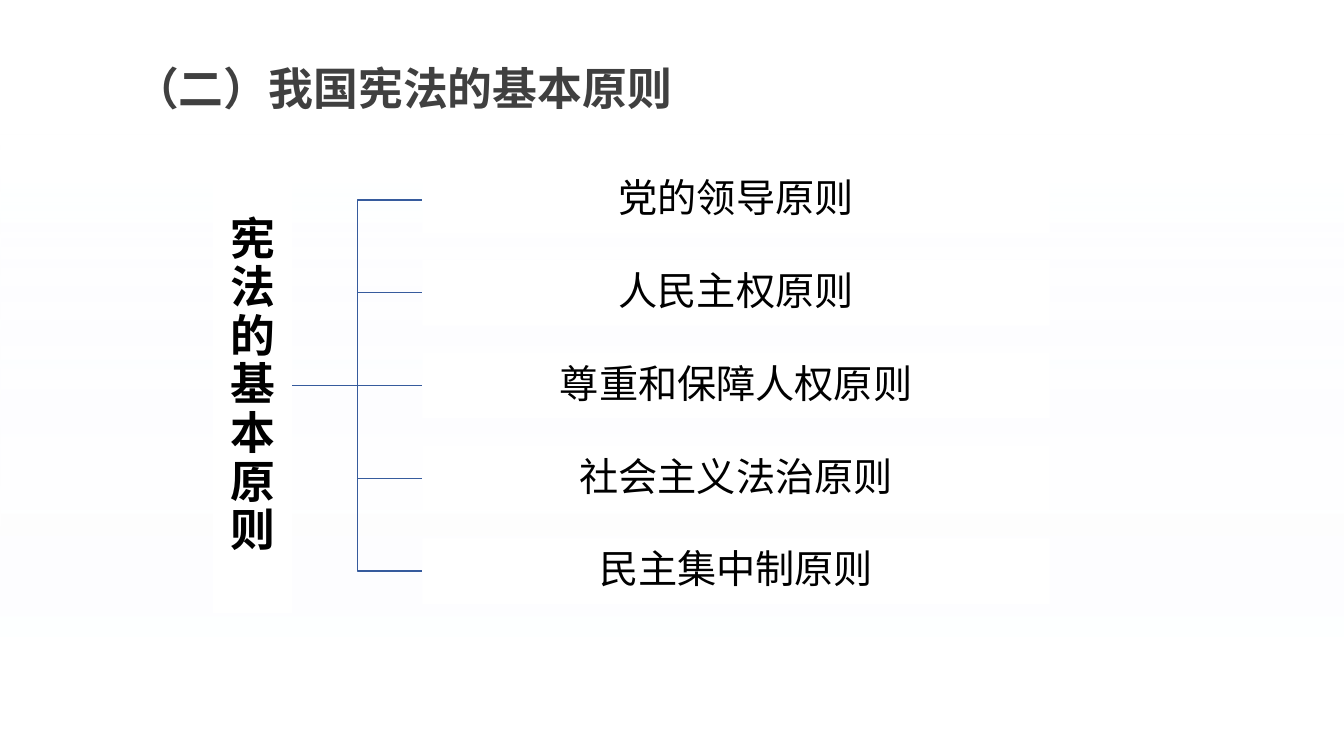
"""Build a slide that branches the basic principles of the constitution."""
from lxml import etree
from pptx import Presentation
from pptx.dml.color import RGBColor
from pptx.enum.shapes import MSO_CONNECTOR, MSO_SHAPE
from pptx.enum.text import MSO_ANCHOR, MSO_AUTO_SIZE, PP_ALIGN
from pptx.oxml.ns import qn
from pptx.util import Inches, Pt

TITLE = "（二）我国宪法的基本原则"
ROOT = "宪法的基本原则"
PRINCIPLES = [
    "党的领导原则",
    "人民主权原则",
    "尊重和保障人权原则",
    "社会主义法治原则",
    "民主集中制原则",
]

WHITE = RGBColor(0xFF, 0xFF, 0xFF)
BLACK = RGBColor(0, 0, 0)
DARK_GRAY = RGBColor(0x40, 0x40, 0x40)
PALE_BLUE = RGBColor(0xF7, 0xFA, 0xFD)
LINE_BLUE = RGBColor(0x36, 0x5B, 0x9D)
FONT = "Noto Sans CJK SC"
TITLE_FONT = "Arial"
RECTANGLE = MSO_SHAPE.RECTANGLE
STRAIGHT, ELBOW = MSO_CONNECTOR.STRAIGHT, MSO_CONNECTOR.ELBOW
MIDDLE = MSO_ANCHOR.MIDDLE
CENTER, LEFT = PP_ALIGN.CENTER, PP_ALIGN.LEFT
NO_FIT = MSO_AUTO_SIZE.NONE
LEFT_SIDE, RIGHT_SIDE = 1, 3

SLIDE_WIDTH, SLIDE_HEIGHT = 13.33, 7.5
GLOW_TOP = 1.33
GLOW_STOPS = [(0, PALE_BLUE, 0), (0.86, WHITE, 70)]
BRANCH_LEFT, BRANCH_TOP = 4.19, 1.66
BRANCH_WIDTH, BRANCH_HEIGHT, BRANCH_PITCH = 6.22, 0.65, 0.92
ROOT_LEFT, ROOT_WIDTH, ROOT_HEIGHT = 2.11, 0.79, 4.51
ROOT_LINE = Pt(34.7)


def write(shape, text, size, color, font_name, bold, align, spacing):
    """Put one formatted paragraph in a shape."""
    frame = shape.text_frame
    frame.text = text
    frame.word_wrap = True
    frame.auto_size = NO_FIT
    frame.vertical_anchor = MIDDLE
    paragraph = frame.paragraphs[0]
    paragraph.alignment = align
    paragraph.line_spacing = spacing
    font = paragraph.runs[0].font
    font.size, font.bold, font.name = Pt(size), bold, font_name
    font.color.rgb = color
    properties = paragraph.runs[0]._r.get_or_add_rPr()
    etree.SubElement(properties, qn("a:ea"), typeface=FONT)


def add_glow(slide):
    """Add the soft gradient band behind the diagram."""
    glow = slide.shapes.add_shape(
        RECTANGLE, 0, Inches(GLOW_TOP),
        Inches(SLIDE_WIDTH), Inches(SLIDE_HEIGHT - GLOW_TOP))
    glow.shadow.inherit = False
    glow.line.fill.background()
    glow.fill.gradient()
    glow.fill.gradient_angle = 270
    for stop, (position, color, _) in zip(glow.fill.gradient_stops, GLOW_STOPS):
        stop.position = position
        stop.color.rgb = color
    colors = glow._element.spPr.iter(qn("a:srgbClr"))
    for element, (_, _, opacity) in zip(colors, GLOW_STOPS):
        etree.SubElement(element, qn("a:alpha"), val=str(opacity * 1000))


def add_box(slide, left, top, width, height, text, size, bold, spacing):
    """Add a white box with centred text."""
    box = slide.shapes.add_shape(
        RECTANGLE, Inches(left), Inches(top), Inches(width), Inches(height))
    box.shadow.inherit = False
    box.fill.solid()
    box.fill.fore_color.rgb = WHITE
    box.line.fill.background()
    frame = box.text_frame
    frame.margin_left = frame.margin_right = Inches(0.02)
    frame.margin_top = frame.margin_bottom = Inches(0.02)
    write(box, text, size, BLACK, FONT, bold, CENTER, spacing)
    return box


def join(slide, root, branch, kind):
    """Connect the root to a branch."""
    connector = slide.shapes.add_connector(kind, 0, 0, 0, 0)
    connector.begin_connect(root, RIGHT_SIDE)
    connector.end_connect(branch, LEFT_SIDE)
    connector.line.color.rgb = LINE_BLUE
    connector.line.width = Pt(1)
    etree.SubElement(connector._element.spPr, qn("a:effectLst"))


def main():
    presentation = Presentation()
    presentation.slide_width = Inches(SLIDE_WIDTH)
    presentation.slide_height = Inches(SLIDE_HEIGHT)
    slide = presentation.slides.add_slide(presentation.slide_layouts[5])

    title = slide.shapes.title
    title.left, title.top = Inches(1.23), Inches(0.64)
    title.width, title.height = Inches(7.19), Inches(0.53)
    write(title, TITLE, 32, DARK_GRAY, TITLE_FONT, True, LEFT, 0.9)

    add_glow(slide)
    middle = len(PRINCIPLES) // 2
    center = BRANCH_TOP + middle * BRANCH_PITCH + BRANCH_HEIGHT / 2
    root = add_box(slide, ROOT_LEFT, center - ROOT_HEIGHT / 2,
                   ROOT_WIDTH, ROOT_HEIGHT, ROOT, 32, True, ROOT_LINE)
    for row, principle in enumerate(PRINCIPLES):
        branch = add_box(slide, BRANCH_LEFT, BRANCH_TOP + row * BRANCH_PITCH,
                         BRANCH_WIDTH, BRANCH_HEIGHT, principle, 28, False, 0.9)
        join(slide, root, branch, STRAIGHT if row == middle else ELBOW)

    presentation.save("out.pptx")


if __name__ == "__main__":
    main()
